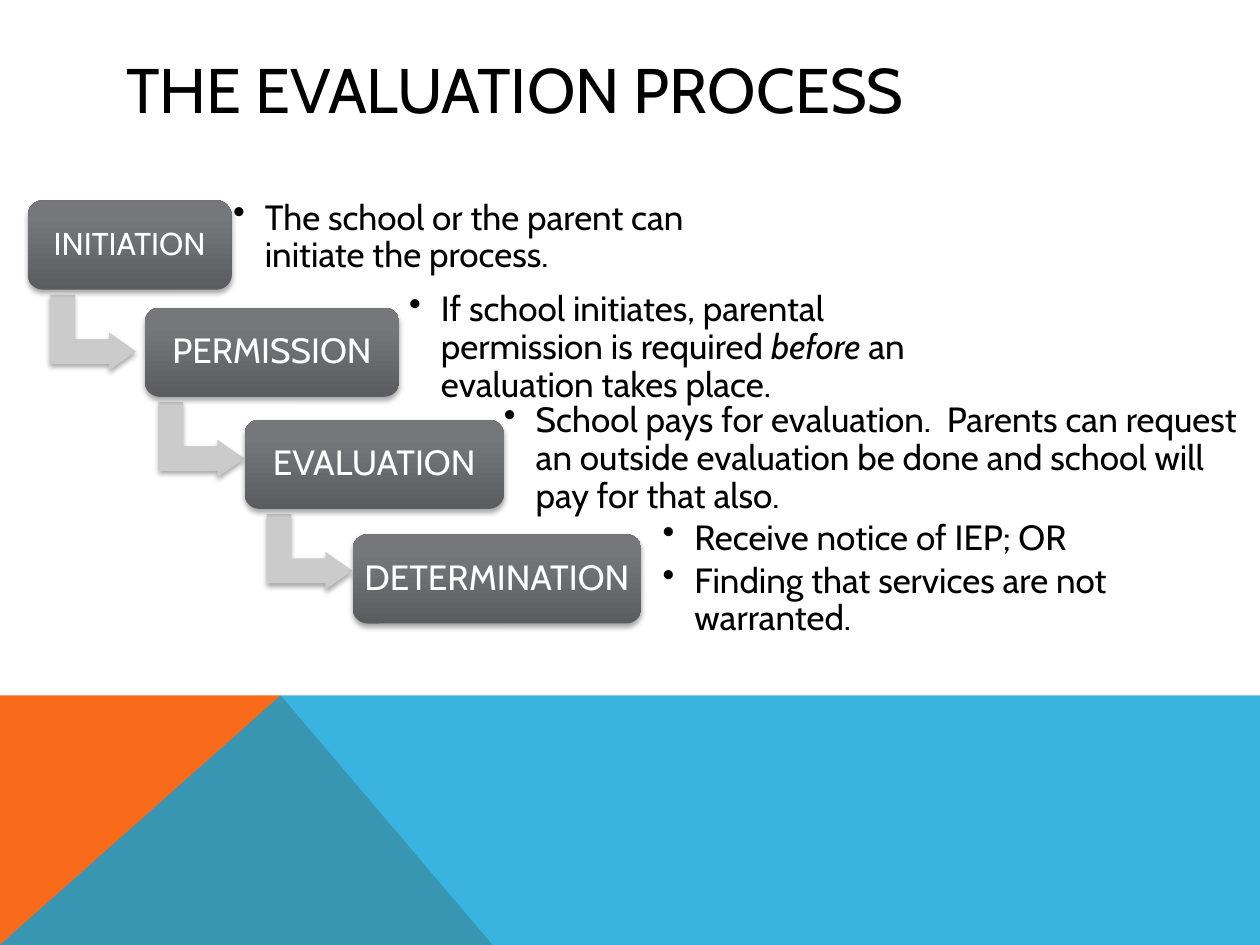
from dataclasses import dataclass

from lxml.etree import SubElement
from pptx import Presentation
from pptx.dml.color import RGBColor
from pptx.enum.shapes import MSO_SHAPE as Preset
from pptx.enum.text import MSO_ANCHOR as Anchor, MSO_AUTO_SIZE as AutoSize, PP_ALIGN as Align
from pptx.oxml.ns import qn
from pptx.shapes.autoshape import Shape
from pptx.slide import Slide
from pptx.text.text import Font
from pptx.util import Cm, Pt

BLACK = RGBColor(0x00, 0x00, 0x00)
WHITE = RGBColor(0xFF, 0xFF, 0xFF)
ORANGE = RGBColor(0xF9, 0x6A, 0x1B)
BLUE = RGBColor(0x08, 0xA1, 0xD9)
ARROW_GREY = RGBColor(0xCB, 0xCB, 0xCC)
DARK_GREY = RGBColor(0x5A, 0x5C, 0x5F)
MID_GREY = RGBColor(0x75, 0x77, 0x7B)

FONT_NAME = "Cabin"
BOX_HEIGHT = 1.8
ARROW_LEFT, ARROW_STEP = 1.12, 2.18
ARROW_SIZE = (1.52, 1.73)
ARROW_ADJUSTMENTS = (0.328, 0.25, 0.358)
INSET = 0.2
BULLET_INDENT = 0.64
SLIDE_SIZE = (25.4, 19.05)
BAND_TOP = 14.02
PEAK = (5.66, BAND_TOP)


@dataclass(frozen=True)
class Area:
    left: float
    top: float
    width: float
    height: float

    def lengths(self) -> tuple[Cm, Cm, Cm, Cm]:
        return Cm(self.left), Cm(self.top), Cm(self.width), Cm(self.height)


@dataclass(frozen=True)
class Item:
    before: str
    emphasis: str = ""
    after: str = ""


@dataclass(frozen=True)
class Step:
    label: str
    label_size: int
    box: Area
    notes: Area
    items: tuple[Item, ...]


STEPS = (
    Step("INITIATION", 18, Area(0.56, 4.04, 4.11, BOX_HEIGHT), Area(4.5, 4.04, 11.58, 1.5),
         (Item("The school or the parent can initiate the process."),)),
    Step("PERMISSION", 20, Area(2.92, 6.2, 5.13, BOX_HEIGHT), Area(8.05, 6.3, 11.66, 1.45),
         (Item("If school initiates, parental permission is required ", "before",
               " an evaluation takes place."),)),
    Step("EVALUATION", 20, Area(4.93, 8.46, 5.23, BOX_HEIGHT), Area(9.96, 8.53, 15.44, 1.45),
         (Item("School pays for evaluation.  Parents can request an outside evaluation "
               "be done and school will pay for that also."),)),
    Step("DETERMINATION", 20, Area(7.11, 10.77, 5.82, BOX_HEIGHT), Area(13.16, 10.95, 10.44, 1.45),
         (Item("Receive notice of IEP; OR"), Item("Finding that services are not warranted."))),
)


def style_font(font: Font, size: int, color: RGBColor) -> None:
    font.name = FONT_NAME
    font.size = Pt(size)
    font.color.rgb = color


def add_alpha(element, percent: int) -> None:
    SubElement(element, qn("a:alpha"), val=str(percent * 1000))


def add_shadow(shape: Shape) -> None:
    shape.shadow.inherit = False
    effects = shape.element.spPr.find(qn("a:effectLst"))
    shadow = SubElement(effects, qn("a:outerShdw"), blurRad=str(Pt(3.1)), dist=str(Pt(1.8)),
                        dir="5400000", rotWithShape="0")
    add_alpha(SubElement(shadow, qn("a:srgbClr"), val=str(BLACK)), 35)


def add_polygon(slide: Slide, points: tuple[tuple[float, float], ...], color: RGBColor) -> Shape:
    start, *others = [(Cm(x), Cm(y)) for x, y in points]
    builder = slide.shapes.build_freeform(*start)
    builder.add_line_segments(others, close=True)
    polygon = builder.convert_to_shape()
    polygon.shadow.inherit = False
    polygon.fill.solid()
    polygon.fill.fore_color.rgb = color
    polygon.line.fill.background()
    return polygon


def add_footer_band(slide: Slide) -> None:
    right, bottom = SLIDE_SIZE
    add_polygon(slide, ((0, bottom), (0, BAND_TOP), PEAK, (9.93, bottom)), ORANGE)
    band = add_polygon(slide, ((0, bottom), PEAK, (right, BAND_TOP), (right, bottom)), BLUE)
    add_alpha(band.element.spPr.find(qn("a:solidFill"))[0], 80)


def add_title(slide: Slide, text: str) -> None:
    title = slide.shapes.title
    title.left, title.top, title.width, title.height = Area(2.29, 1.02, 20.88, 1.52).lengths()
    frame = title.text_frame
    frame.text = text
    frame.auto_size = AutoSize.NONE
    frame.vertical_anchor = Anchor.MIDDLE
    para = frame.paragraphs[0]
    para.alignment = Align.LEFT
    style_font(para.runs[0].font, 36, BLACK)


def add_arrow(slide: Slide, index: int, step: Step) -> None:
    place = Area(ARROW_LEFT + index * ARROW_STEP, step.box.top + BOX_HEIGHT, *ARROW_SIZE)
    arrow = slide.shapes.add_shape(Preset.BENT_UP_ARROW, *place.lengths())
    arrow.rotation = 90
    for position, value in enumerate(ARROW_ADJUSTMENTS):
        arrow.adjustments[position] = value
    arrow.fill.solid()
    arrow.fill.fore_color.rgb = ARROW_GREY
    arrow.line.fill.background()
    add_shadow(arrow)


def add_box(slide: Slide, step: Step) -> None:
    box = slide.shapes.add_shape(Preset.ROUNDED_RECTANGLE, *step.box.lengths())
    box.fill.gradient()
    box.fill.gradient_angle = 90
    for stop, color, position in zip(box.fill.gradient_stops, (DARK_GREY, MID_GREY), (0, 0.8)):
        stop.color.rgb = color
        stop.position = position
    box.line.fill.background()
    add_shadow(box)
    frame = box.text_frame
    frame.text = step.label
    frame.word_wrap = False
    frame.vertical_anchor = Anchor.MIDDLE
    para = frame.paragraphs[0]
    para.alignment = Align.CENTER
    para.line_spacing = 0.9
    style_font(para.runs[0].font, step.label_size, WHITE)


def add_notes(slide: Slide, step: Step) -> None:
    frame = slide.shapes.add_textbox(*step.notes.lengths()).text_frame
    frame.word_wrap = True
    frame.vertical_anchor = Anchor.MIDDLE
    frame.margin_left = frame.margin_right = frame.margin_top = frame.margin_bottom = Cm(INSET)
    for index, item in enumerate(step.items):
        para = frame.add_paragraph() if index else frame.paragraphs[0]
        para.line_spacing = 0.9
        para.space_after = Pt(3)
        properties = para._p.get_or_add_pPr()
        properties.set("marL", str(Cm(BULLET_INDENT)))
        properties.set("indent", str(-Cm(BULLET_INDENT)))
        SubElement(properties, qn("a:buChar"), char="•")
        for text in filter(None, (item.before, item.emphasis, item.after)):
            span = para.add_run()
            span.text = text
            style_font(span.font, 20, BLACK)
            span.font.italic = text == item.emphasis


def main() -> None:
    deck = Presentation()
    deck.slide_width, deck.slide_height = map(Cm, SLIDE_SIZE)
    page = deck.slides.add_slide(deck.slide_layouts[5])
    add_footer_band(page)
    add_title(page, "THE EVALUATION PROCESS")
    for index, step in enumerate(STEPS):
        if step is not STEPS[-1]:
            add_arrow(page, index, step)
        add_box(page, step)
        add_notes(page, step)
    deck.save("out.pptx")


if __name__ == "__main__":
    main()
